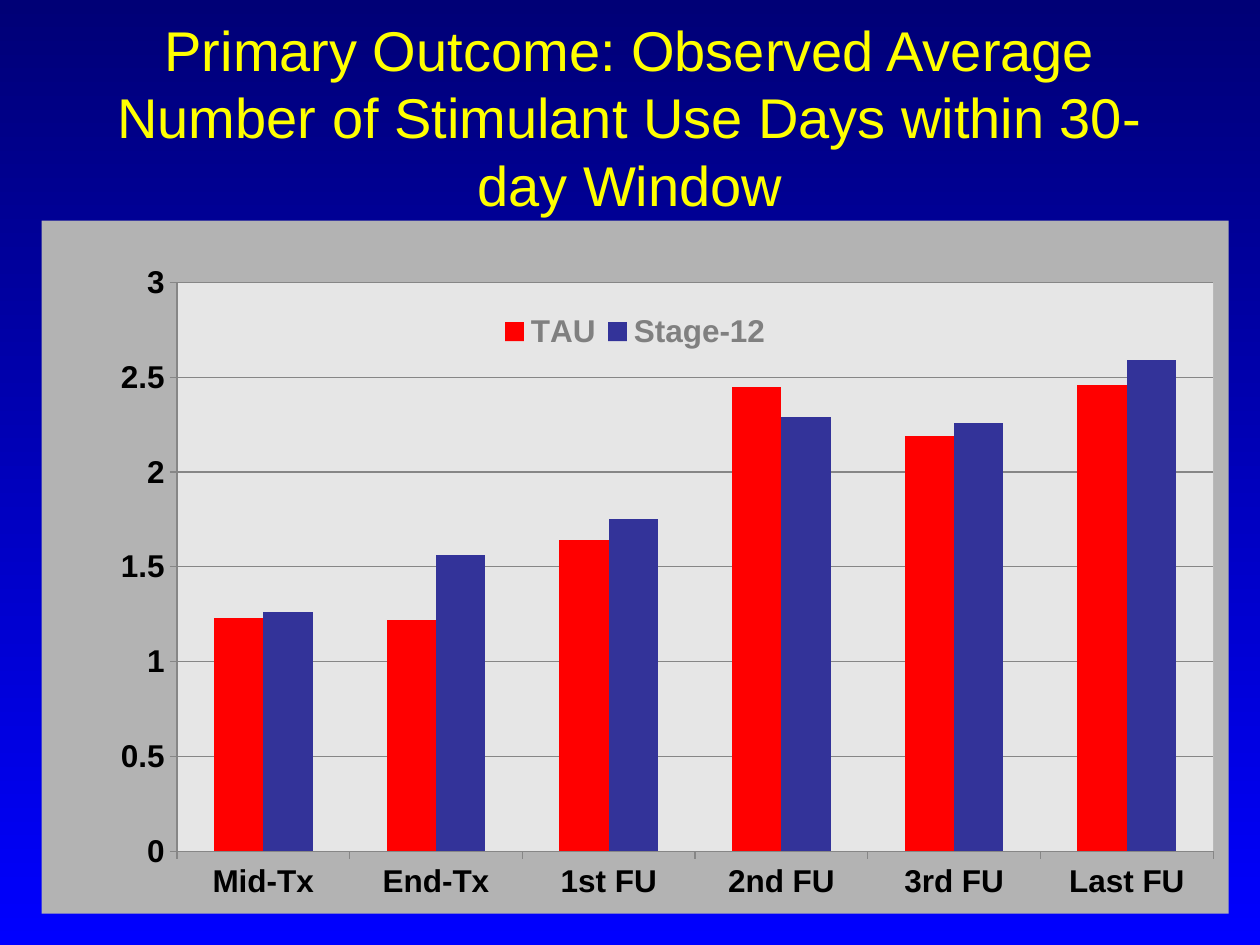
from lxml.etree import fromstring
from pptx import Presentation
from pptx.chart.data import CategoryChartData as ChartData
from pptx.dml.color import RGBColor
from pptx.enum.chart import XL_CHART_TYPE as Kind, XL_LEGEND_POSITION as Pos, XL_TICK_MARK as Tick
from pptx.enum.text import MSO_ANCHOR as Anchor, MSO_AUTO_SIZE as Auto, PP_ALIGN as Align
from pptx.oxml.ns import nsdecls, qn
from pptx.util import Cm, Pt


def paint(color, code):
    color.rgb = RGBColor.from_string(code)


def write(frame, text, size=18, code="000000", font="Arial", align=Align.CENTER):
    frame.text = text
    para = frame.paragraphs[0]
    para.alignment = align
    run = para.runs[0].font
    run.name, run.size = font, Pt(size)
    paint(run.color, code)


deck = Presentation()
deck.slide_width, deck.slide_height = Cm(25.4), Cm(19.05)
slide = deck.slides.add_slide(deck.slide_layouts[5])

# Background gradient, dark at the top
back = slide.background.fill
back.gradient()
back.gradient_angle = 270
for stop, code in zip(back.gradient_stops, ("000076", "0000FF")):
    paint(stop.color, code)
back.gradient_stops[0].position = 0
back.gradient_stops[1].position = 1

# Title
title = slide.shapes.title
title.left, title.top, title.width, title.height = Cm(1.27), Cm(0.76), Cm(22.86), Cm(3.18)
frame = title.text_frame
frame.word_wrap = True
frame.auto_size = Auto.NONE
frame.vertical_anchor = Anchor.MIDDLE
write(frame, "Primary Outcome: Observed Average Number of Stimulant Use Days "
      "within 30-day Window", size=32, code="FFFF00")

# Chart data
data = ChartData()
data.categories = ["Mid-Tx", "End-Tx", "1st FU", "2nd FU", "3rd FU", "Last FU"]
data.add_series("TAU", (1.23, 1.22, 1.64, 2.45, 2.19, 2.46))
data.add_series("Stage-12", (1.26, 1.56, 1.75, 2.29, 2.26, 2.59))
chart = slide.shapes.add_chart(Kind.COLUMN_CLUSTERED, Cm(0.84), Cm(4.45),
                               Cm(23.93), Cm(13.97), data).chart
chart.has_title = False
chart.font.name, chart.font.size = "Arial", Pt(18)
paint(chart.font.color, "000000")

# Columns
plot = chart.plots[0]
plot.gap_width, plot.overlap, plot.vary_by_categories = 150, 0, False
for series, code in zip(plot.series, ("FF0000", "333399")):
    series.format.fill.solid()
    paint(series.format.fill.fore_color, code)

# Axes and gridlines
scale = chart.value_axis
scale.minimum_scale, scale.maximum_scale, scale.major_unit = 0, 3, 0.5
scale.has_major_gridlines = True
lines = [scale.major_gridlines.format.line]
for axis in (chart.category_axis, scale):
    axis.major_tick_mark, axis.minor_tick_mark = Tick.OUTSIDE, Tick.NONE
    axis.tick_labels.font.bold = True
    lines.append(axis.format.line)
for line in lines:
    line.width = Pt(0.75)
    paint(line.color, "868686")

# Legend
chart.has_legend = True
legend = chart.legend
legend.position, legend.include_in_layout = Pos.TOP, False
legend.font.bold, legend.font.size = True, Pt(18)
paint(legend.font.color, "808080")

# Places of the plot and legend, as shares of the chart
area = chart._chartSpace.find(".//" + qn("c:plotArea"))
for part, index, inner, box in (
        (area, 0, '<c:layoutTarget val="inner"/>', (0.114, 0.089, 0.873, 0.821)),
        (legend._element, 1, "", (0.38, 0.13, 0.24, 0.06))):
    for old in part.findall(qn("c:layout")):
        part.remove(old)
    modes = "".join(f'<c:{side}Mode val="edge"/>' for side in "xy")
    sizes = "".join(f'<c:{side} val="{share}"/>' for side, share in zip("xywh", box))
    part.insert(index, fromstring(
        f'<c:layout {nsdecls("c")}><c:manualLayout>{inner}{modes}{sizes}'
        '</c:manualLayout></c:layout>'))

# Fills behind the chart and the plot
for part, code in ((chart._chartSpace.find(qn("c:chart")), "B3B3B3"), (area[-1], "E6E6E6")):
    part.addnext(fromstring(
        f'<c:spPr {nsdecls("c", "a")}><a:solidFill><a:srgbClr val="{code}"/></a:solidFill>'
        '<a:ln><a:noFill/></a:ln></c:spPr>'))

deck.save("out.pptx")
